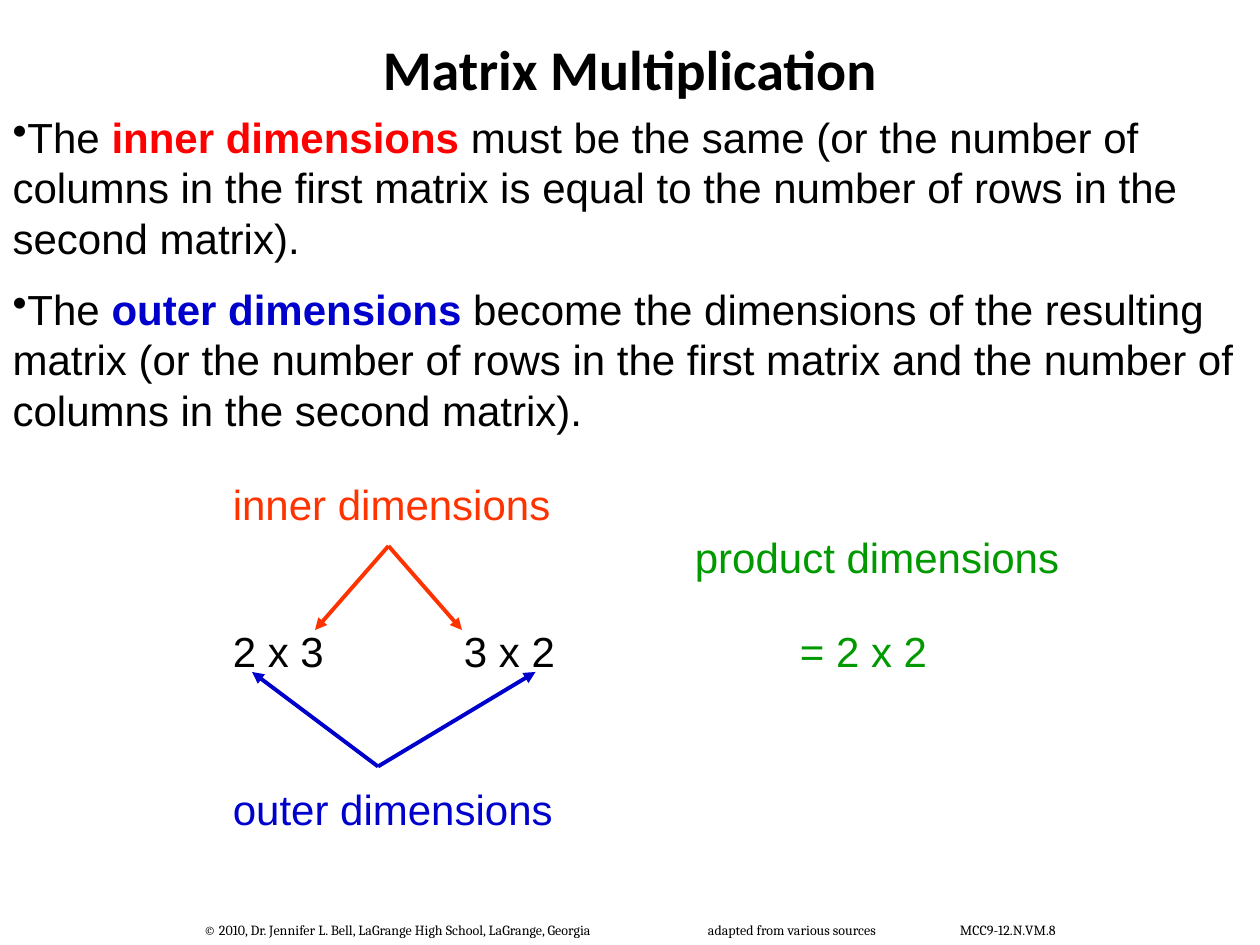
from lxml.etree import SubElement
from pptx import Presentation
from pptx.dml.color import RGBColor
from pptx.enum.shapes import MSO_CONNECTOR as Connector
from pptx.enum.text import MSO_ANCHOR as Anchor, MSO_AUTO_SIZE as AutoSize, PP_ALIGN as Align
from pptx.oxml.ns import qn
from pptx.util import Pt

BLACK = RGBColor(0x00, 0x00, 0x00)
RED = RGBColor(0xFF, 0x00, 0x00)
ORANGE = RGBColor(0xFF, 0x33, 0x00)
BLUE = RGBColor(0x00, 0x00, 0xCC)
GREEN = RGBColor(0x00, 0x99, 0x00)

SLIDE_W, SLIDE_H = 720, 540
HEADING = "Matrix Multiplication"
RULES = [
    ("The ", "inner dimensions ", RED,
     "must be the same (or the number of columns in the first matrix is equal "
     "to the number of rows in the second matrix)."),
    ("The ", "outer dimensions ", BLUE,
     "become the dimensions of the resulting matrix (or the number of rows in "
     "the first matrix and the number of columns in the second matrix)."),
]
LEFT_X, SIZES_Y = 126, 354
LABELS = [
    ("2 x 3", LEFT_X, SIZES_Y, 78, BLACK),
    ("3 x 2", 258, SIZES_Y, 78, BLACK),
    ("= 2 x 2", 450, SIZES_Y, 120, GREEN),
    ("inner dimensions", LEFT_X, 270, 210, ORANGE),
    ("outer dimensions", LEFT_X, 444, 210, BLUE),
    ("product dimensions", 390, 300, 240, GREEN),
]
ARROW_PAIRS = [
    ((222, 312), [(180, 360), (264, 360)], ORANGE),
    ((216, 438), [(144, 384), (306, 384)], BLUE),
]
CREDITS = "\t\t".join([
    "© 2010, Dr. Jennifer L. Bell, LaGrange High School, LaGrange, Georgia",
    "adapted from various sources",
    "MCC9-12.N.VM.8",
])


def place(shape, left, top, width, height):
    shape.left, shape.top = Pt(left), Pt(top)
    shape.width, shape.height = Pt(width), Pt(height)


def style(font, name, size, color, bold=False):
    font.name, font.size, font.bold = name, Pt(size), bold
    font.color.rgb = color


def add_label(slide, text, left, top, width, height, font_name, size, color, align=Align.LEFT):
    label = slide.shapes.add_textbox(Pt(left), Pt(top), Pt(width), Pt(height))
    label.text_frame.word_wrap = True
    line = label.text_frame.paragraphs[0]
    line.text, line.alignment = text, align
    style(line.font, font_name, size, color)


def add_arrow(slide, start, end, color):
    arrow = slide.shapes.add_connector(Connector.STRAIGHT, *map(Pt, start + end))
    arrow.line.color.rgb, arrow.line.width = color, Pt(2.25)
    SubElement(arrow.line._get_or_add_ln(), qn("a:tailEnd"), type="triangle")
    SubElement(arrow._element.spPr, qn("a:effectLst"))


def fill_rules(rules):
    frame = rules.text_frame
    frame.word_wrap, frame.auto_size = True, AutoSize.NONE
    frame.vertical_anchor = Anchor.TOP
    for i, (opening, term, color, rest) in enumerate(RULES):
        rule = frame.paragraphs[0] if i == 0 else frame.add_paragraph()
        rule.space_before = Pt(12 if i else 0)
        props = rule._p.get_or_add_pPr()
        props.set("marL", "0")
        props.set("indent", "0")
        SubElement(props, qn("a:buFontTx"))
        SubElement(props, qn("a:buChar"), char="•")
        style(rule.font, "Arial", 24, BLACK)
        for text in (opening, term, rest):
            run = rule.add_run()
            run.text = text
            if text == term:
                run.font.bold, run.font.color.rgb = True, color


def main():
    deck = Presentation()
    deck.slide_width, deck.slide_height = Pt(SLIDE_W), Pt(SLIDE_H)
    slide = deck.slides.add_slide(deck.slide_layouts[1])

    title, rules = slide.placeholders
    place(title, 0, 6, SLIDE_W, 66)
    title.text_frame.text = HEADING
    title.text_frame.vertical_anchor = Anchor.MIDDLE
    heading = title.text_frame.paragraphs[0]
    heading.alignment = Align.CENTER
    style(heading.font, "Calibri", 32, BLACK, bold=True)

    place(rules, 0, 60, SLIDE_W, 196.5)
    fill_rules(rules)

    for text, left, top, width, color in LABELS:
        add_label(slide, text, left, top, width, 36, "Arial", 24, color)
    for start, ends, color in ARROW_PAIRS:
        for end in ends:
            add_arrow(slide, start, end, color)
    add_label(slide, CREDITS, 0, 523, SLIDE_W, 17, "Cambria", 8, BLACK, Align.CENTER)

    deck.save("out.pptx")


if __name__ == "__main__":
    main()
